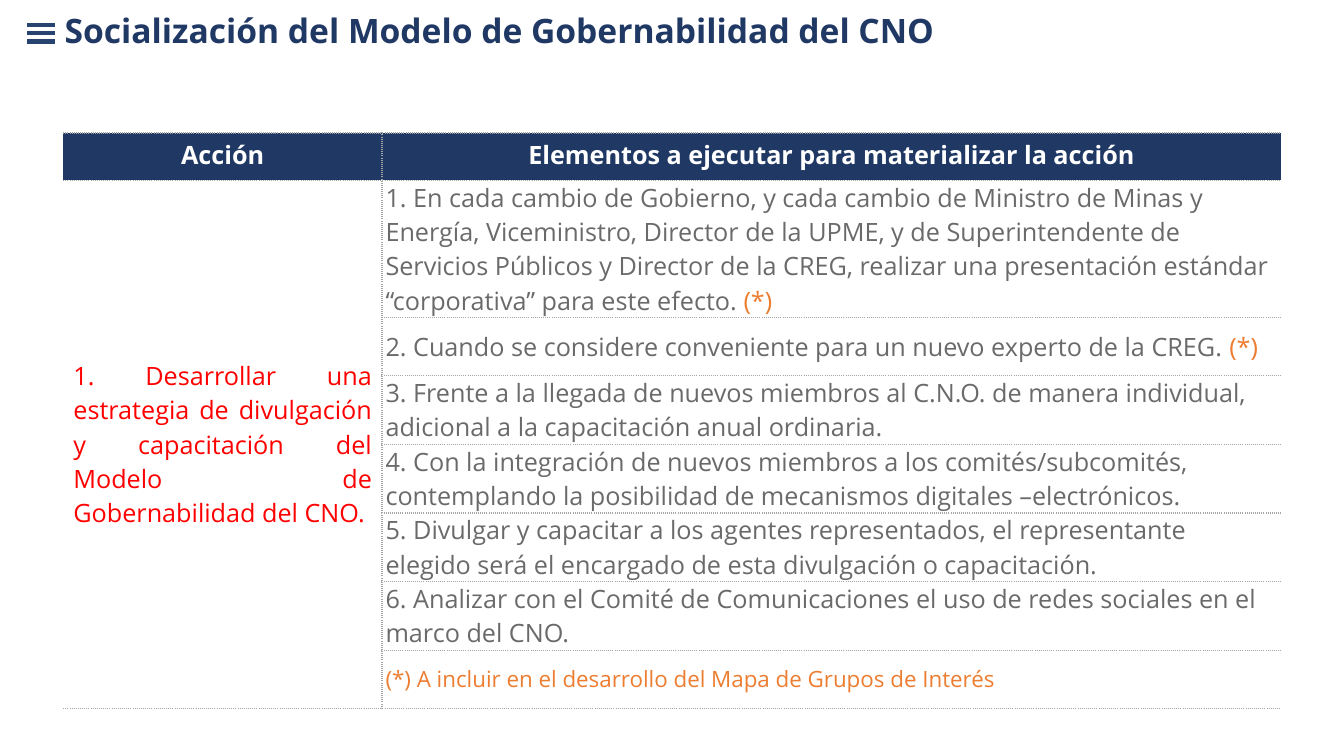
from lxml.etree import SubElement
from pptx import Presentation
from pptx.dml.color import RGBColor
from pptx.enum.text import MSO_ANCHOR, MSO_AUTO_SIZE, PP_ALIGN
from pptx.oxml.ns import qn
from pptx.util import Pt

COLORS = {
    "navy": "203864", "menu": "274470", "white": "FFFFFF", "red": "FF0000",
    "gray": "6A6A6A", "orange": "ED7D31", "border": "A6A6A6",
}
TITLE = "Socialización del Modelo de Gobernabilidad del CNO"
HEADERS = ["Acción", "Elementos a ejecutar para materializar la acción"]
ACTION = ("1. Desarrollar una estrategia de divulgación y capacitación del Modelo "
          "de Gobernabilidad del CNO.")
MARK = "(*)"
ELEMENTS = [
    "1. En cada cambio de Gobierno, y cada cambio de Ministro de Minas y Energía, "
    "Viceministro, Director de la UPME, y de Superintendente de Servicios Públicos y "
    "Director de la CREG, realizar una presentación estándar “corporativa” para este efecto. (*)",
    "2. Cuando se considere conveniente para un nuevo experto de la CREG. (*)",
    "3. Frente a la llegada de nuevos miembros al C.N.O. de manera individual, adicional "
    "a la capacitación anual ordinaria.",
    "4. Con la integración de nuevos miembros a los comités/subcomités, contemplando la "
    "posibilidad de mecanismos digitales –electrónicos.",
    "5. Divulgar y capacitar a los agentes representados, el representante elegido será el "
    "encargado de esta divulgación o capacitación.",
    "6. Analizar con el Comité de Comunicaciones el uso de redes sociales en el marco del CNO.",
]
FOOTNOTE = "(*) A incluir en el desarrollo del Mapa de Grupos de Interés"


class SlideBuilder:
    font = "Open Sans"

    def __init__(self, page):
        self.page = page

    def style(self, span, color, size=18, bold=False):
        span.font.name = self.font
        span.font.size = Pt(size)
        span.font.bold = bold
        span.font.color.rgb = RGBColor.from_string(COLORS[color])

    def title(self, text, left, top, width, height):
        box = self.page.shapes.title
        box.left, box.top, box.width, box.height = map(Pt, (left, top, width, height))
        frame = box.text_frame
        frame.text = text
        frame.word_wrap = True
        frame.auto_size = MSO_AUTO_SIZE.NONE
        frame.vertical_anchor = MSO_ANCHOR.MIDDLE
        para = frame.paragraphs[0]
        para.alignment = PP_ALIGN.LEFT
        para.line_spacing = 0.9
        self.style(para.runs[0], "navy", 24, True)

    def line(self, left, right, y):
        line = self.page.shapes.add_connector(1, Pt(left), Pt(y), Pt(right), Pt(y))
        line.line.color.rgb = RGBColor.from_string(COLORS["menu"])
        line.line.width = Pt(3)
        SubElement(line._element.spPr, qn("a:effectLst"))

    def table(self, left, top, column_widths, row_heights):
        frame = self.page.shapes.add_table(
            len(row_heights), len(column_widths), Pt(left), Pt(top),
            Pt(sum(column_widths)), Pt(sum(row_heights)))
        table = frame.table
        table.first_row = table.horz_banding = False
        for column, width in zip(table.columns, column_widths):
            column.width = Pt(width)
        for row, height in zip(table.rows, row_heights):
            row.height = Pt(height)
        return table

    def borders(self, cell, sides):
        """Draw dotted lines on the given sides (letters of LRTB) and none on the others."""
        properties = cell._tc.get_or_add_tcPr()
        for side in "LRTB":
            line = SubElement(properties, qn(f"a:ln{side}"), w=str(Pt(1)))
            if side in sides:
                fill = SubElement(line, qn("a:solidFill"))
                SubElement(fill, qn("a:srgbClr"), val=COLORS["border"])
                SubElement(line, qn("a:prstDash"), val="sysDot")
            else:
                SubElement(line, qn("a:noFill"))

    def fill(self, cell, color=None):
        if color:
            cell.fill.solid()
            cell.fill.fore_color.rgb = RGBColor.from_string(COLORS[color])
        else:
            cell.fill.background()

    def cell_text(self, cell, parts, align=PP_ALIGN.LEFT, size=18, bold=False):
        """Write (text, color) parts into one paragraph of the cell."""
        para = cell.text_frame.paragraphs[0]
        para.alignment = align
        for text, color in parts:
            span = para.add_run()
            span.text = text
            self.style(span, color, size, bold)

    def element(self, cell, parts, size=18):
        cell.vertical_anchor = MSO_ANCHOR.MIDDLE
        cell.margin_left = cell.margin_right = Pt(2.5)
        cell.margin_top = cell.margin_bottom = 0
        self.cell_text(cell, parts, size=size)


def main():
    deck = Presentation()
    deck.slide_width, deck.slide_height = Pt(960), Pt(540)
    page = deck.slides.add_slide(deck.slide_layouts[5])
    builder = SlideBuilder(page)

    for index in range(3):
        builder.line(19.4, 39.6, 18 + 5.8 * index)
    builder.title(TITLE, 38.9, -8.6, 914.4, 64)

    rows = len(ELEMENTS) + 2
    table = builder.table(45.2, 95, [227.7, 642.3], [33.8] + [41.6] * (rows - 1))
    last = rows - 1
    for row in range(rows):
        action_sides = "R" + ("T" if row < 2 else "") + ("B" if row in (0, 1, last) else "")
        for column, sides in enumerate((action_sides, "LTB")):
            cell = table.cell(row, column)
            builder.borders(cell, sides)
            builder.fill(cell, None if row else "navy")

    for column, header in enumerate(HEADERS):
        builder.cell_text(table.cell(0, column), [(header, "white")], PP_ALIGN.CENTER, bold=True)

    action = table.cell(1, 0)
    action.merge(table.cell(last, 0))
    action.vertical_anchor = MSO_ANCHOR.MIDDLE
    builder.cell_text(action, [(ACTION, "red")], PP_ALIGN.JUSTIFY)

    for row, text in enumerate(ELEMENTS, start=1):
        parts = [(text.removesuffix(MARK), "gray")]
        if text.endswith(MARK):
            parts.append((MARK, "orange"))
        builder.element(table.cell(row, 1), parts)
    builder.element(table.cell(last, 1), [(FOOTNOTE, "orange")], 16)

    deck.save("out.pptx")


if __name__ == "__main__":
    main()
